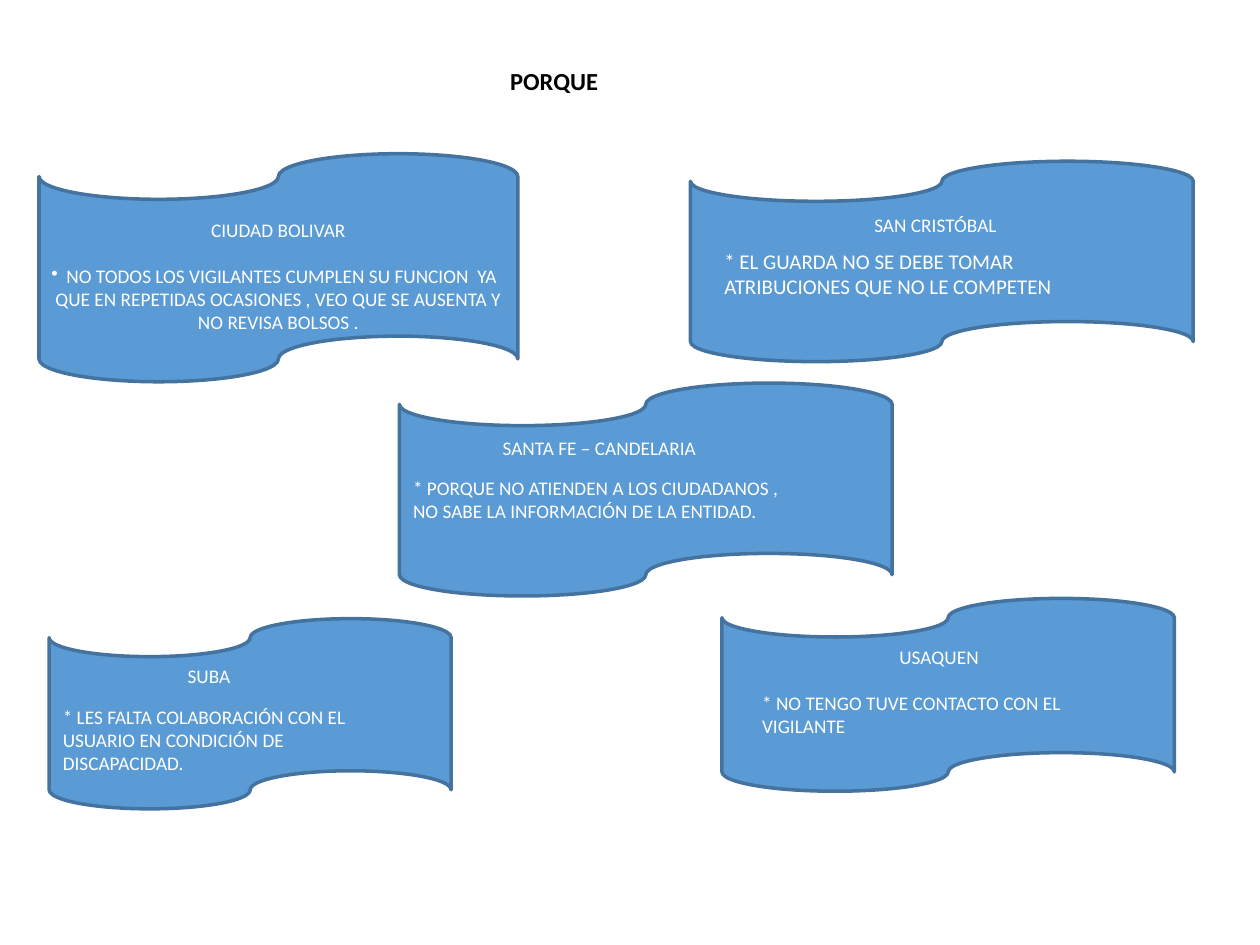
from lxml.etree import SubElement
from pptx import Presentation
from pptx.dml.color import RGBColor
from pptx.enum.shapes import MSO_SHAPE
from pptx.enum.text import MSO_ANCHOR, PP_ALIGN
from pptx.oxml.ns import qn
from pptx.util import Inches, Pt

COLORS = {"tape": "5B9BD5", "edge": "43739E", "title": "000000", "text": "FFFFFF"}
COLUMNS, ROWS = 100, 75


class TapeSlide:
    """Style and current slide; boxes are (column, row, columns, rows)."""

    font_name = "Calibri"

    def __init__(self, presentation):
        self.slide = presentation.slides.add_slide(presentation.slide_layouts[6])
        self.column = presentation.slide_width / COLUMNS
        self.row = presentation.slide_height / ROWS

    def place(self, box):
        left, top, width, height = box
        return (round(left * self.column), round(top * self.row),
                round(width * self.column), round(height * self.row))

    def add_text_run(self, paragraph, text, size=11, color="text", bold=False):
        run = paragraph.add_run()
        run.text = text
        run.font.name = self.font_name
        run.font.size = Pt(size)
        run.font.bold = bold
        run.font.color.rgb = RGBColor.from_string(COLORS[color])

    def label(self, box, text, anchor=MSO_ANCHOR.TOP, **style):
        frame = self.slide.shapes.add_textbox(*self.place(box)).text_frame
        frame.word_wrap = True
        frame.vertical_anchor = anchor
        self.add_text_run(frame.paragraphs[0], text, **style)

    def tape(self, box):
        shape = self.slide.shapes.add_shape(
            MSO_SHAPE.FLOWCHART_PUNCHED_TAPE, *self.place(box))
        shape.shadow.inherit = False
        shape.fill.solid()
        shape.fill.fore_color.rgb = RGBColor.from_string(COLORS["tape"])
        shape.line.color.rgb = RGBColor.from_string(COLORS["edge"])
        shape.line.width = Pt(2)
        return shape

    def tape_with_text(self, box, heading, reason):
        frame = self.tape(box).text_frame
        frame.word_wrap = True
        frame.vertical_anchor = MSO_ANCHOR.MIDDLE
        frame.margin_top, frame.margin_bottom = Inches(0.13), 0
        first, second = frame.paragraphs[0], frame.add_paragraph()
        second.space_before = Pt(13)
        bullet = SubElement(second._p.get_or_add_pPr(), qn("a:buChar"))
        bullet.set("char", "•")
        for paragraph, text in ((first, heading), (second, reason)):
            paragraph.alignment = PP_ALIGN.CENTER
            self.add_text_run(paragraph, text)


# Tape box, heading box and text, reason box, text and size
LOCALITIES = [
    ((54.8, 12.8, 39.9, 15.9), (68.4, 16.4, 11.9, 2.9), "SAN CRISTÓBAL",
     (56.5, 19.2, 30.5, 9.1),
     "* EL GUARDA NO SE DEBE TOMAR ATRIBUCIONES QUE NO LE COMPETEN", 12),
    ((31.7, 30.4, 39.1, 16.9), (38.9, 34.1, 20.1, 2.9), "SANTA FE – CANDELARIA",
     (31.8, 37.3, 32.7, 4.7),
     "* PORQUE NO ATIENDEN A LOS CIUDADANOS , NO SABE LA INFORMACIÓN DE LA ENTIDAD.", 11),
    ((3.9, 49.1, 31.9, 15.1), (13.9, 52.2, 17.2, 2.9), "SUBA",
     (4, 55.5, 28.6, 6.6),
     "* LES FALTA COLABORACIÓN CON EL USUARIO EN CONDICIÓN DE DISCAPACIDAD.", 11),
    ((57.3, 47.5, 35.9, 15.3), (70.4, 50.7, 12.6, 2.9), "USAQUEN",
     (59.5, 54.4, 32.3, 4.7),
     "* NO TENGO TUVE CONTACTO CON EL VIGILANTE", 11),
]


def main():
    presentation = Presentation()
    presentation.slide_width, presentation.slide_height = Inches(10), Inches(7.5)
    page = TapeSlide(presentation)

    # Title
    page.label((39.5, 4, 49.6, 4.8), "PORQUE", MSO_ANCHOR.MIDDLE,
               size=14, color="title", bold=True)

    # Tape that holds its own text
    page.tape_with_text(
        (3.1, 12.2, 38, 18.1), "CIUDAD BOLIVAR",
        "NO TODOS LOS VIGILANTES CUMPLEN SU FUNCION  YA QUE EN REPETIDAS OCASIONES , "
        "VEO QUE SE AUSENTA Y NO REVISA BOLSOS .")

    # Tapes with a heading and a reason laid over them
    for tape_box, heading_box, heading, reason_box, reason, size in LOCALITIES:
        page.tape(tape_box)
        page.label(heading_box, heading)
        page.label(reason_box, reason, size=size)

    presentation.save("out.pptx")


if __name__ == "__main__":
    main()
